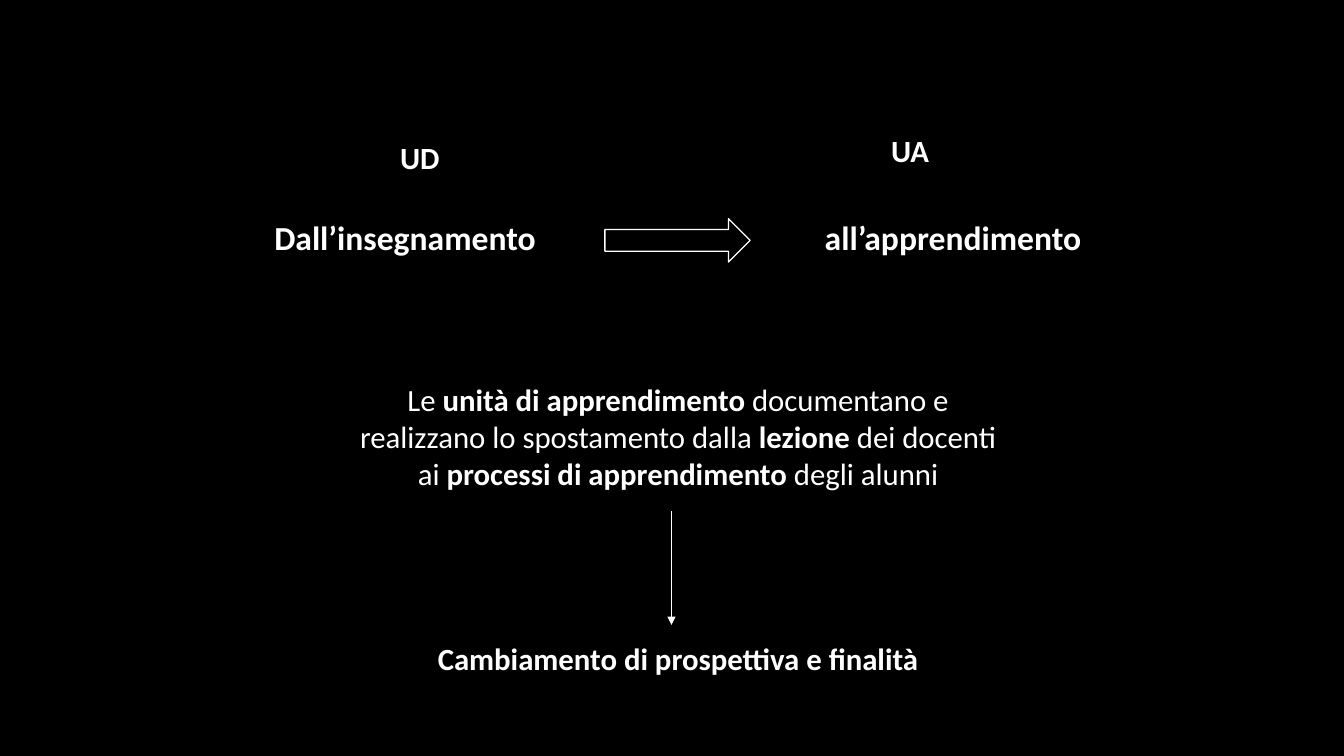
from lxml.etree import SubElement as Sub
from pptx import Presentation
from pptx.dml.color import RGBColor
from pptx.enum.shapes import MSO_CONNECTOR as Conn, MSO_SHAPE as Shape
from pptx.enum.text import MSO_ANCHOR as Anchor, MSO_AUTO_SIZE as Auto, PP_ALIGN as Align
from pptx.oxml.ns import qn
from pptx.util import Inches, Pt

WHITE = "FFFFFF"


def color(code):
    return RGBColor.from_string(code)


def style(item, form):
    for name, value in form.items():
        setattr(item, name, value)


def write(para, text, size, bold=True):
    run = para.add_run()
    run.text = text
    style(run.font, dict(name="Calibri", size=Pt(size), bold=bold))
    run.font.color.rgb = color(WHITE)


def label(slide, text, box):
    frame = slide.shapes.add_textbox(*map(Inches, box)).text_frame
    style(frame, dict(word_wrap=False, auto_size=Auto.SHAPE_TO_FIT_TEXT))
    write(frame.paragraphs[0], text, 22)


def heading(slide, box):
    left, top, width, height = box
    title = slide.shapes.title
    style(title, dict(zip(("left", "top", "width", "height"), map(Inches, box))))
    style(title.text_frame, dict(word_wrap=True, auto_size=Auto.NONE,
                                 vertical_anchor=Anchor.MIDDLE))
    para = title.text_frame.paragraphs[0]
    style(para, dict(alignment=Align.LEFT, line_spacing=1.0, space_before=Pt(0)))
    # The tab stop sets the second half to the right of the arrow
    tabs = Sub(para._p.get_or_add_pPr(), qn("a:tabLst"))
    Sub(tabs, qn("a:tab"), pos=str(Inches(5.46)), algn="l")
    write(para, "Dall’insegnamento\tall’apprendimento", 24)

    # Block arrow between the halves
    arrow = slide.shapes.add_shape(
        Shape.RIGHT_ARROW, Inches(left + 3.38), Inches(top + 0.07), Inches(1.44), Inches(0.43))
    arrow.shadow.inherit = False
    arrow.fill.background()
    arrow.line.color.rgb = color(WHITE)
    arrow.line.width = Pt(1)

    # Short names above each half
    label(slide, "UD", (left + 1.25, top - 0.77, 0.6, 0.47))
    label(slide, "UA", (left + 6.12, top - 0.84, 0.58, 0.47))


def body(slide, box):
    left, top, width, height = box
    frame = slide.shapes.add_textbox(*map(Inches, box)).text_frame
    frame.word_wrap = True
    first, last = frame.paragraphs[0], frame.add_paragraph()
    first.alignment = last.alignment = Align.CENTER
    parts = ("Le ", "unità di apprendimento ",
             "documentano e realizzano lo spostamento dalla ", "lezione ",
             "dei docenti ai ", "processi di apprendimento ", "degli alunni")
    for i, text in enumerate(parts):
        write(first, text, 22, bold=i % 2 == 1)
    last.space_before = Pt(106)
    write(last, "Cambiamento di prospettiva e finalità", 22)

    # Thin arrow down to the conclusion
    mid = Inches(left + 3.27)
    link = slide.shapes.add_connector(
        Conn.STRAIGHT, mid, Inches(top + 1.34), mid, Inches(top + 2.47))
    link.line.color.rgb = color(WHITE)
    link.line.width = Pt(0.5)
    Sub(link.line._get_or_add_ln(), qn("a:tailEnd"), type="triangle")
    Sub(link._element.spPr, qn("a:effectLst"))


def main():
    deck = Presentation()
    style(deck, dict(slide_width=Inches(13.33), slide_height=Inches(7.5)))
    slide = deck.slides.add_slide(deck.slide_layouts.get_by_name("Title Only"))
    fill = slide.background.fill
    fill.solid()
    fill.fore_color.rgb = color("000000")
    heading(slide, (2.62, 2.1, 9.5, 0.5))
    body(slide, (3.39, 3.73, 6.67, 3.06))
    deck.save("out.pptx")


if __name__ == "__main__":
    main()
